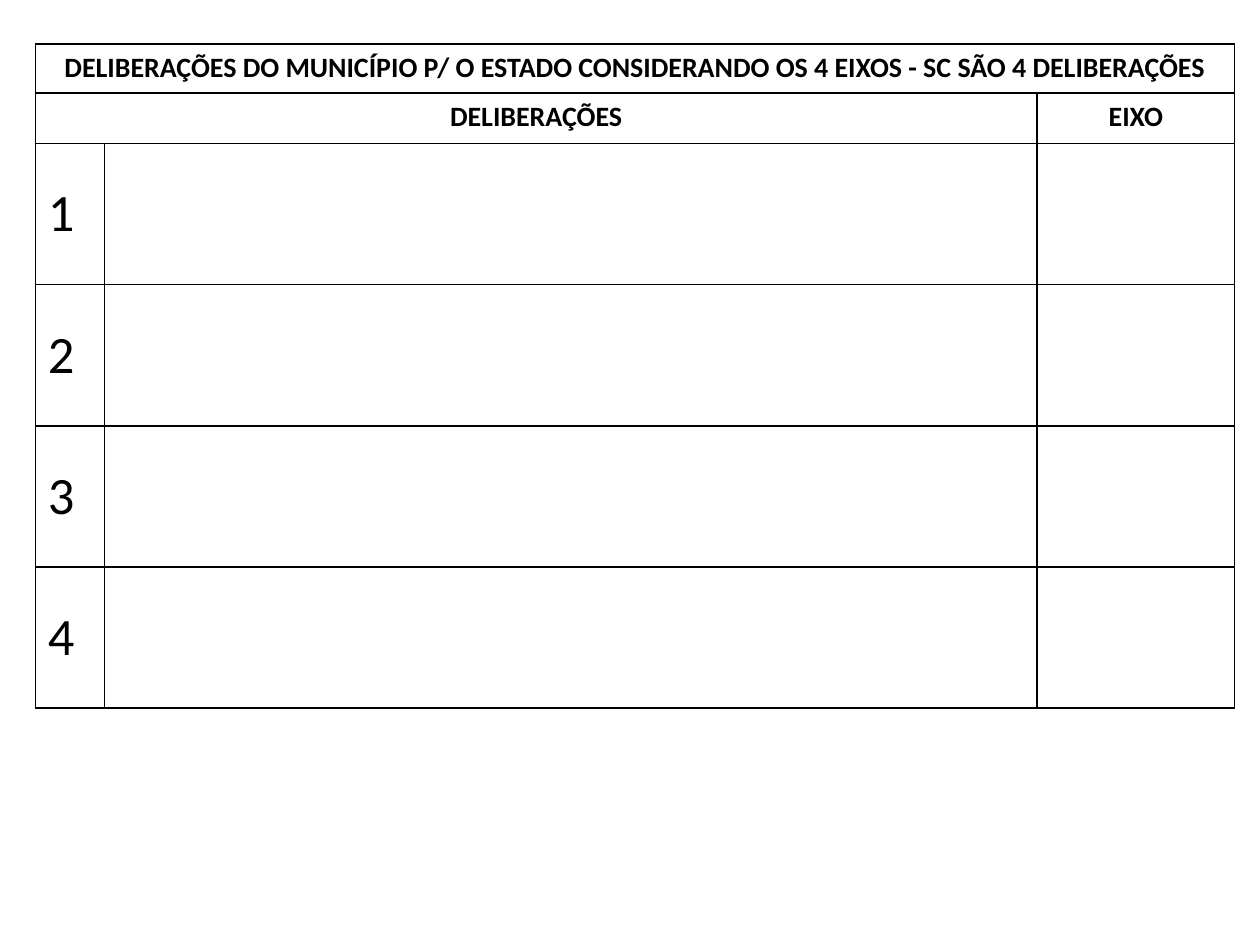
from dataclasses import dataclass

from lxml.etree import SubElement
from pptx import Presentation
from pptx.dml.color import RGBColor
from pptx.enum.text import PP_ALIGN
from pptx.oxml.ns import qn
from pptx.util import Inches, Pt


@dataclass(frozen=True)
class Theme:
    """Colours, type and line sizes of the slide."""

    ink: str = "000000"
    paper: str = "FFFFFF"
    font: str = "Calibri"
    heading_size: int = 16
    number_size: int = 30
    border_width: int = 1


THEME = Theme()
HEADING = "DELIBERAÇÕES DO MUNICÍPIO P/ O ESTADO CONSIDERANDO OS 4 EIXOS - SC SÃO 4 DELIBERAÇÕES"
DELIBERATION_COUNT = 4
COLUMN_WIDTHS = (0.55, 7.4, 1.57)
ROW_HEIGHTS = (0.39, 0.4) + (1.12,) * DELIBERATION_COUNT


def style_cell(cell):
    """Give a cell its border on every side and a plain fill."""
    properties = cell._tc.get_or_add_tcPr()
    for side in ("lnL", "lnR", "lnT", "lnB"):
        border = SubElement(properties, qn(f"a:{side}"), w=str(Pt(THEME.border_width)))
        border_fill = SubElement(border, qn("a:solidFill"))
        SubElement(border_fill, qn("a:srgbClr"), val=THEME.ink)
    cell.fill.solid()
    cell.fill.fore_color.rgb = RGBColor.from_string(THEME.paper)


def write_cell(cell, text, size, bold=False, align=None, line_spacing=None):
    """Write one formatted run in a cell."""
    paragraph = cell.text_frame.paragraphs[0]
    paragraph.alignment = align
    paragraph.line_spacing = line_spacing
    run = paragraph.add_run()
    run.text = text
    run.font.name = THEME.font
    run.font.size = Pt(size)
    run.font.bold = bold
    run.font.color.rgb = RGBColor.from_string(THEME.ink)


def write_heading(cell, text):
    """Write a bold centred heading in a cell."""
    write_cell(cell, text, THEME.heading_size, bold=True, align=PP_ALIGN.CENTER)


def add_form(slide):
    """Add the empty bordered table of the form."""
    form = slide.shapes.add_table(
        len(ROW_HEIGHTS), len(COLUMN_WIDTHS), Inches(0.28), Inches(0.35),
        Inches(sum(COLUMN_WIDTHS)), Inches(sum(ROW_HEIGHTS)),
    ).table
    form.first_row = False
    form.horz_banding = False
    for column, width in zip(form.columns, COLUMN_WIDTHS):
        column.width = Inches(width)
    for row, height in zip(form.rows, ROW_HEIGHTS):
        row.height = Inches(height)
    for cell in form.iter_cells():
        style_cell(cell)
    return form


def main():
    """Build the deliberations form and save it."""
    presentation = Presentation()
    presentation.slide_width = Inches(10)
    presentation.slide_height = Inches(7.5)
    slide = presentation.slides.add_slide(presentation.slide_layouts[6])

    form = add_form(slide)
    form.cell(0, 0).merge(form.cell(0, 2))
    form.cell(1, 0).merge(form.cell(1, 1))
    write_heading(form.cell(0, 0), HEADING)
    write_heading(form.cell(1, 0), "DELIBERAÇÕES")
    write_heading(form.cell(1, 2), "EIXO")
    for number in range(1, DELIBERATION_COUNT + 1):
        write_cell(form.cell(number + 1, 0), str(number), THEME.number_size, line_spacing=1.5)

    presentation.save("out.pptx")


if __name__ == "__main__":
    main()
